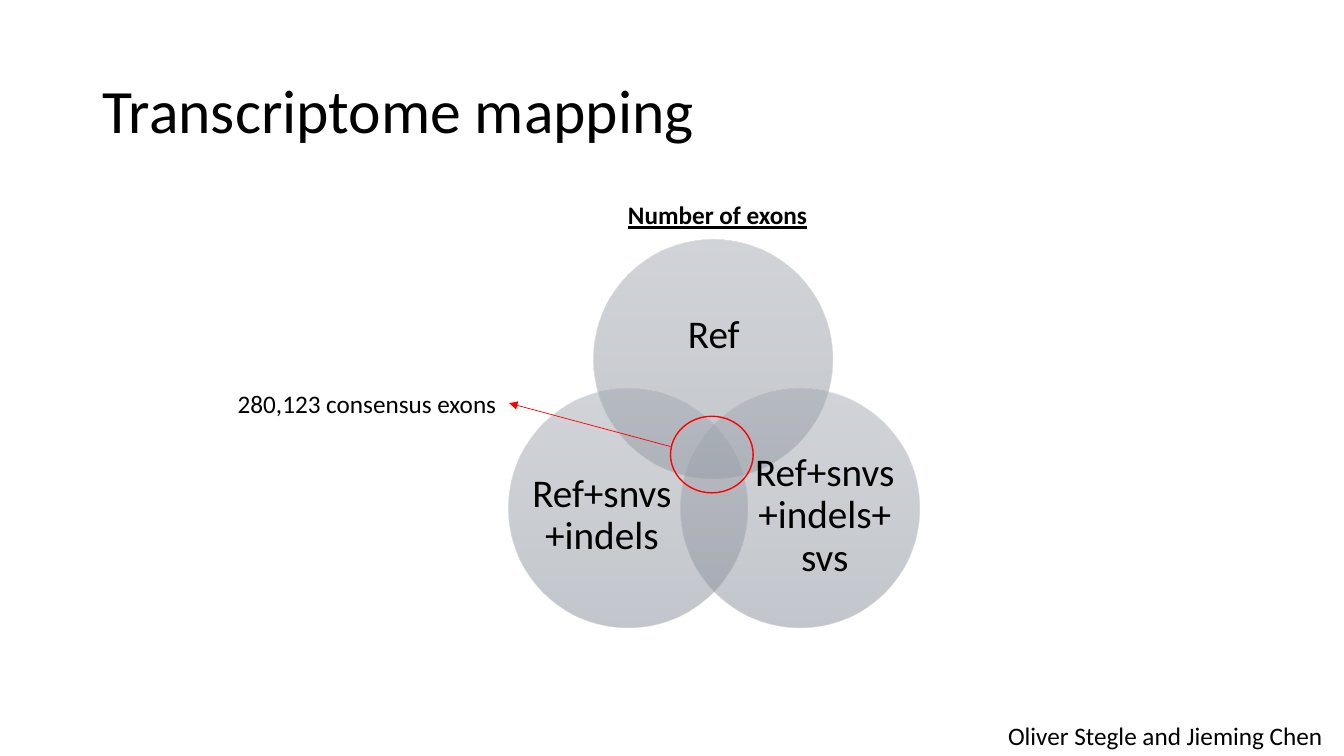
from lxml import etree
from pptx import Presentation
from pptx.dml.color import RGBColor
from pptx.enum.shapes import MSO_CONNECTOR, MSO_SHAPE
from pptx.enum.text import MSO_ANCHOR, MSO_AUTO_SIZE, PP_ALIGN
from pptx.oxml import parse_xml
from pptx.oxml.ns import nsdecls, qn
from pptx.util import Inches, Pt

COLORS = {"text": "000000", "accent": "FF0000",
          "top": "A5AAB3", "middle": "999EA7", "bottom": "878E9A"}
FONT = "Calibri"
DIAMETER = 2.37


class SlideBuilder:
    def __init__(self, slide):
        self.shapes = slide.shapes

    def color(self, name):
        return RGBColor.from_string(COLORS[name])

    def text(self, box, text, size, anchor=MSO_ANCHOR.MIDDLE, align=PP_ALIGN.LEFT,
             spacing=0.9, margin=None, wrap=True):
        s = self.shapes.add_textbox(*map(Inches, box))
        tf = s.text_frame
        tf.word_wrap = wrap
        tf.vertical_anchor = anchor
        if margin is not None:
            tf.margin_left = tf.margin_right = Inches(margin)
            tf.margin_top = tf.margin_bottom = Inches(margin)
        p = tf.paragraphs[0]
        p.text = text
        p.alignment = align
        p.line_spacing = spacing
        p.font.name = FONT
        p.font.size = Pt(size)
        p.font.color.rgb = self.color("text")
        return s

    def label(self, box, text, heading=False):
        s = self.text(box, text, 18, anchor=MSO_ANCHOR.TOP, spacing=1.0, wrap=False)
        tf = s.text_frame
        tf.auto_size = MSO_AUTO_SIZE.SHAPE_TO_FIT_TEXT
        if heading:
            font = tf.paragraphs[0].font
            font.bold = font.underline = True

    def ellipse(self, box):
        s = self.shapes.add_shape(MSO_SHAPE.OVAL, *map(Inches, box))
        s.shadow.inherit = False
        s.fill.background()
        return s

    def venn_circle(self, left, top):
        """Half-transparent circle, shaded from top to bottom."""
        s = self.ellipse((left, top, DIAMETER, DIAMETER))
        s.line.fill.background()
        stops = "".join(
            f'<a:gs pos="{pos}"><a:srgbClr val="{COLORS[name]}">'
            '<a:alpha val="50000"/></a:srgbClr></a:gs>'
            for pos, name in ((0, "top"), (50000, "middle"), (100000, "bottom")))
        gradient = parse_xml(
            f'<a:gradFill {nsdecls("a")} rotWithShape="1"><a:gsLst>{stops}</a:gsLst>'
            '<a:lin ang="5400000" scaled="0"/></a:gradFill>')
        sp_pr = s.element.spPr
        sp_pr.replace(sp_pr.find(qn("a:noFill")), gradient)

    def ring(self, box):
        s = self.ellipse(box)
        s.line.color.rgb = self.color("accent")
        s.line.width = Pt(1)

    def arrow(self, start, end):
        s = self.shapes.add_connector(MSO_CONNECTOR.STRAIGHT, *map(Inches, start + end))
        s.line.color.rgb = self.color("accent")
        s.line.width = Pt(0.5)
        ln = s.line._get_or_add_ln()
        etree.SubElement(ln, qn("a:tailEnd"), type="triangle")
        etree.SubElement(s.element.spPr, qn("a:effectLst"))


def main():
    prs = Presentation()
    prs.slide_width, prs.slide_height = Inches(13.33), Inches(7.5)
    slide = SlideBuilder(prs.slides.add_slide(prs.slide_layouts[6]))

    slide.text((0.92, 0.4, 11.5, 1.45), "Transcriptome mapping", 44)

    venn_sets = (
        ((5.89, 2.38), (6.21, 2.8, 1.74, 1.07), "Ref"),
        ((6.75, 3.86), (7.47, 4.47, 1.42, 1.3), "Ref+snvs+indels+svs"),
        ((5.04, 3.86), (5.26, 4.47, 1.42, 1.3), "Ref+snvs+indels"),
    )
    for corner, text_box, name in venn_sets:
        slide.venn_circle(*corner)
        slide.text(text_box, name, 28, align=PP_ALIGN.CENTER, margin=0)

    slide.label((6.13, 1.93, 1.99, 0.4), "Number of exons", heading=True)
    slide.ring((6.65, 4.13, 0.82, 0.76))
    slide.arrow((6.65, 4.43), (5.05, 4))
    slide.label((2.26, 3.8, 2.8, 0.4), "280,123 consensus exons")
    slide.label((9.9, 7.1, 3.36, 0.4), "Oliver Stegle and Jieming Chen")

    prs.save("out.pptx")


if __name__ == "__main__":
    main()
